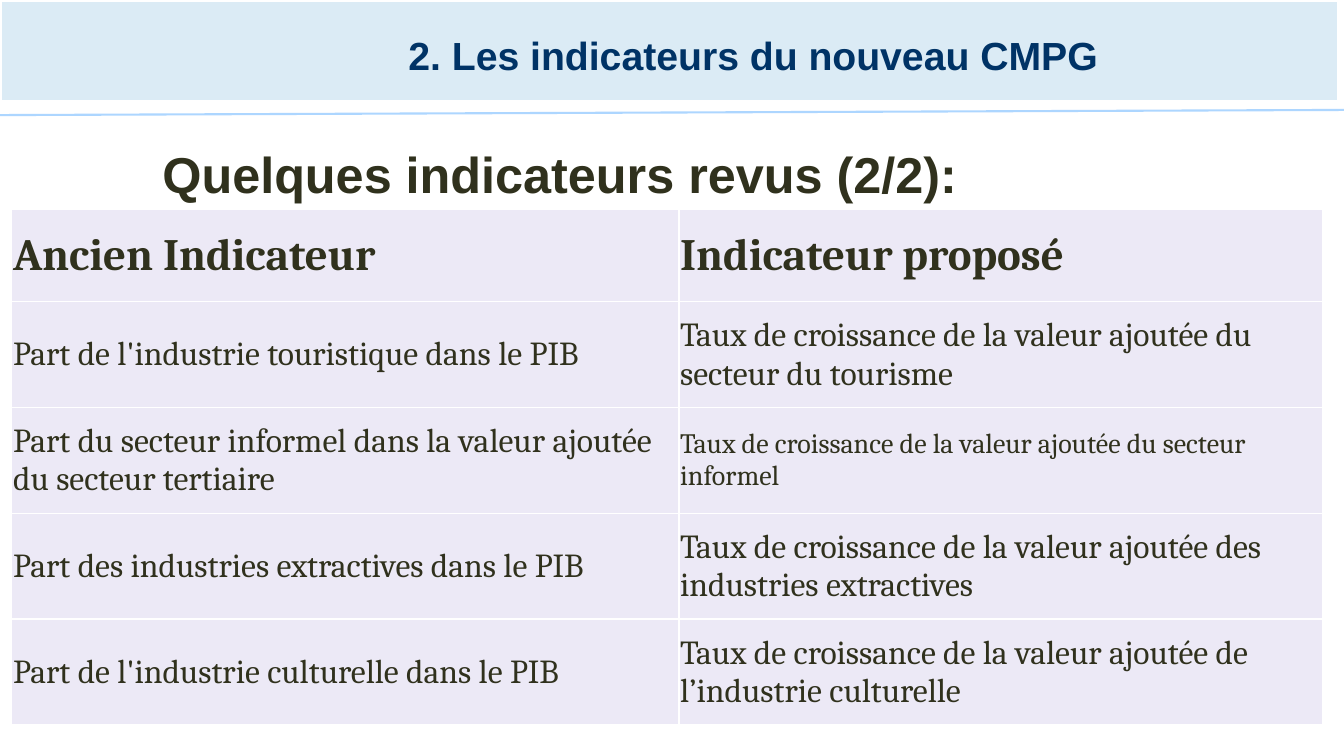
"""Build the slide on revised indicators of the new CMPG."""
from dataclasses import dataclass

from lxml.etree import SubElement
from pptx import Presentation
from pptx.dml.color import RGBColor
from pptx.enum.shapes import MSO_CONNECTOR, MSO_SHAPE
from pptx.enum.text import MSO_ANCHOR, PP_ALIGN
from pptx.oxml import parse_xml
from pptx.oxml.ns import nsdecls, qn
from pptx.slide import Slide
from pptx.table import _Cell
from pptx.text.text import TextFrame
from pptx.util import Cm, Pt

INK = "30311D"
WHITE = "FFFFFF"


@dataclass
class Style:
    size: float
    name: str
    color: str = INK
    bold: bool = False


@dataclass
class Label:
    text: str
    left: float
    top: float
    width: float
    height: float
    style: Style


HEAD = Style(32, "Cambria", bold=True)
BODY = Style(24, "Cambria")
SMALL = Style(20, "Cambria")

LABELS = [
    Label("2. Les indicateurs du nouveau CMPG", 4.11, 0.25, 29.74, 2.26,
          Style(28, "Arial", "003366", True)),
    Label("Quelques indicateurs revus (2/2):", 1.07, 3.48, 26.09, 1.8,
          Style(36, "Arial", bold=True)),
]

ROWS = [
    [("Ancien Indicateur", HEAD), ("Indicateur proposé", HEAD)],
    [("Part de l'industrie touristique dans le PIB", BODY),
     ("Taux de croissance de la valeur ajoutée du secteur du tourisme", BODY)],
    [("Part du secteur informel dans la valeur ajoutée du secteur tertiaire", BODY),
     ("Taux de croissance de la valeur ajoutée du secteur informel", SMALL)],
    [("Part des industries extractives dans le PIB", BODY),
     ("Taux de croissance de la valeur ajoutée des industries extractives", BODY)],
    [("Part de l'industrie culturelle dans le PIB", BODY),
     ("Taux de croissance de la valeur ajoutée de l’industrie culturelle", BODY)],
]
WIDTHS = [16.81, 16.21]
HEIGHTS = [2.31] + [2.67] * (len(ROWS) - 1)


def color(code: str) -> RGBColor:
    """Turn a hex string into a colour."""
    return RGBColor.from_string(code)


def write(frame: TextFrame, text: str, style: Style, align: PP_ALIGN) -> None:
    """Fill a text frame with one styled paragraph."""
    frame.word_wrap = True
    para = frame.paragraphs[0]
    para.text = text
    para.alignment = align
    font = para.font
    font.size, font.name, font.bold = Pt(style.size), style.name, style.bold
    font.color.rgb = color(style.color)


def add_band(slide: Slide) -> None:
    """Draw the title band and the rule below it."""
    band = slide.shapes.add_shape(MSO_SHAPE.RECTANGLE, 0, 0, Cm(33.73), Cm(2.57))
    band.shadow.inherit = False
    band.fill.solid()
    band.fill.fore_color.rgb = color("DBEBF5")
    band.line.color.rgb = color(WHITE)
    band.line.width = Pt(2.25)
    rule = slide.shapes.add_connector(
        MSO_CONNECTOR.STRAIGHT, 0, Cm(2.9), Cm(33.87), Cm(2.77))
    rule.line.color.rgb = color("ADD6FF")
    rule.line.width = Pt(1.5)
    SubElement(rule._element.spPr, qn("a:effectLst"))


def add_label(slide: Slide, label: Label) -> None:
    """Add a centred text box."""
    box = slide.shapes.add_textbox(
        Cm(label.left), Cm(label.top), Cm(label.width), Cm(label.height))
    box.text_frame.vertical_anchor = MSO_ANCHOR.MIDDLE
    write(box.text_frame, label.text, label.style, PP_ALIGN.CENTER)


def fill_cell(cell: _Cell, text: str, style: Style) -> None:
    """Write a table cell and set its fill and borders."""
    write(cell.text_frame, text, style, PP_ALIGN.LEFT)
    cell.vertical_anchor = MSO_ANCHOR.MIDDLE
    cell.margin_left = cell.margin_right = cell.margin_top = Cm(0.03)
    cell.margin_bottom = 0
    cell.fill.solid()
    cell.fill.fore_color.rgb = color("ECE9F6")
    props = cell._tc.get_or_add_tcPr()
    for spot, side in enumerate("LRTB"):
        props.insert(spot, parse_xml(
            f'<a:ln{side} {nsdecls("a")} w="{Pt(1)}"><a:solidFill>'
            f'<a:srgbClr val="{WHITE}"/></a:solidFill></a:ln{side}>'))


def add_grid(slide: Slide) -> None:
    """Add the table of old and proposed indicators."""
    grid = slide.shapes.add_table(
        len(ROWS), len(WIDTHS), Cm(0.3), Cm(5.28),
        Cm(sum(WIDTHS)), Cm(sum(HEIGHTS))).table
    for col, width in zip(grid.columns, WIDTHS):
        col.width = Cm(width)
    for row, height, cells in zip(grid.rows, HEIGHTS, ROWS):
        row.height = Cm(height)
        for cell, (text, style) in zip(row.cells, cells):
            fill_cell(cell, text, style)


def main() -> None:
    """Build and save the deck."""
    deck = Presentation()
    deck.slide_width, deck.slide_height = Cm(33.87), Cm(19.05)
    slide = deck.slides.add_slide(deck.slide_layouts[6])
    add_band(slide)
    for label in LABELS:
        add_label(slide, label)
    add_grid(slide)
    deck.save("out.pptx")


if __name__ == "__main__":
    main()
